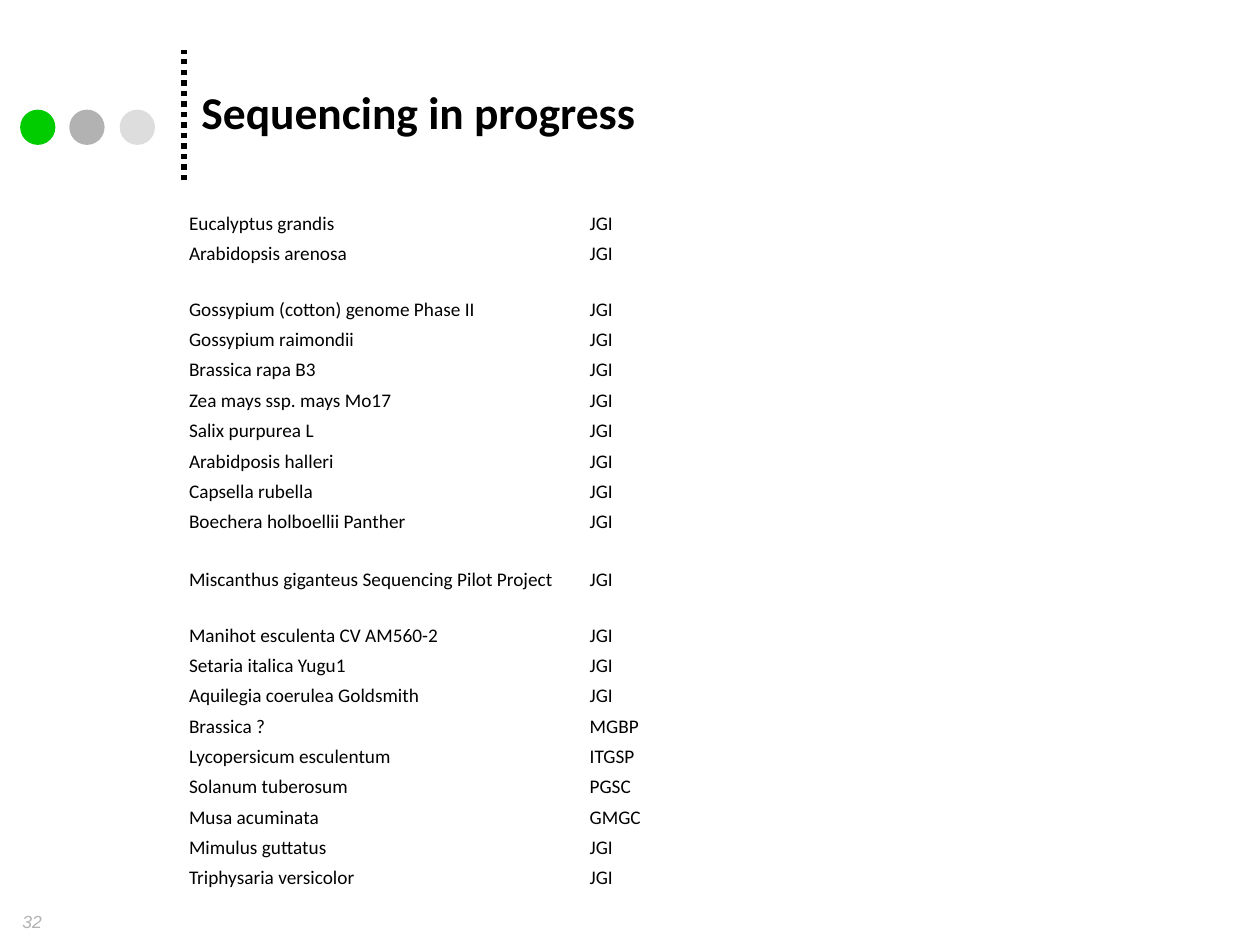
from pptx import Presentation
from pptx import util as u
from pptx.dml.color import RGBColor
from pptx.enum import dml, shapes, text
from pptx.oxml.ns import qn
from lxml import etree

SEQUENCING = [
    ("Eucalyptus grandis", "JGI"),
    ("Arabidopsis arenosa", "JGI"),
    ("Gossypium (cotton) genome Phase II", "JGI"),
    ("Gossypium raimondii", "JGI"),
    ("Brassica rapa B3", "JGI"),
    ("Zea mays ssp. mays Mo17", "JGI"),
    ("Salix purpurea L", "JGI"),
    ("Arabidposis halleri", "JGI"),
    ("Capsella rubella", "JGI"),
    ("Boechera holboellii Panther", "JGI"),
    ("Miscanthus giganteus Sequencing Pilot Project", "JGI"),
    ("Manihot esculenta CV AM560-2", "JGI"),
    ("Setaria italica Yugu1", "JGI"),
    ("Aquilegia coerulea Goldsmith", "JGI"),
    ("Brassica ?", "MGBP"),
    ("Lycopersicum esculentum", "ITGSP"),
    ("Solanum tuberosum", "PGSC"),
    ("Musa acuminata", "GMGC"),
    ("Mimulus guttatus", "JGI"),
    ("Triphysaria versicolor", "JGI"),
]
ROW_HEIGHT = 0.241
TALL_ROWS = {2: 0.44, 10: 0.46, 11: 0.44}
COLUMN_WIDTHS = (3.18, 2.33)


def color(hex_string):
    """Return the colour for a hex string."""
    return RGBColor.from_string(hex_string)


def style(paragraph, size, face, hex_string, bold=False, italic=False):
    """Set the font of a whole paragraph."""
    font = paragraph.font
    font.size, font.name = u.Pt(size), face
    font.bold, font.italic = bold, italic
    font.color.rgb = color(hex_string)


def add_label(slide, box, wording, anchor, **font):
    """Add a wrapped text box holding one paragraph."""
    frame = slide.shapes.add_textbox(*map(u.Inches, box)).text_frame
    frame.word_wrap = True
    frame.vertical_anchor = anchor
    frame.text = wording
    style(frame.paragraphs[0], **font)


def add_dot(slide, left, hex_string):
    """Add one of the round ornaments beside the title."""
    dot = slide.shapes.add_shape(
        shapes.MSO_SHAPE.OVAL, u.Inches(left), u.Inches(0.87), u.Inches(0.28), u.Inches(0.28))
    dot.shadow.inherit = False
    dot.fill.solid()
    dot.fill.fore_color.rgb = color(hex_string)
    dot.line.fill.background()


def add_divider(slide):
    """Add the dotted vertical line left of the title."""
    divider = slide.shapes.add_connector(
        shapes.MSO_CONNECTOR.STRAIGHT,
        u.Inches(1.46), u.Inches(1.43), u.Inches(1.46), u.Inches(0.4))
    divider.line.color.rgb = color("000000")
    divider.line.width = u.Pt(3)
    divider.line.dash_style = dml.MSO_LINE.ROUND_DOT
    etree.SubElement(divider._element.spPr, qn("a:effectLst"))


def fill_cell(cell, wording):
    """Write one unfilled table cell, anchored at its bottom."""
    cell.fill.background()
    cell.vertical_anchor = text.MSO_ANCHOR.BOTTOM
    cell.margin_left = cell.margin_right = cell.margin_top = u.Inches(0.01)
    cell.margin_bottom = 0
    cell.text = wording
    style(cell.text_frame.paragraphs[0], 11, "Calibri", "000000")


def add_species_table(slide):
    """Add the table of species and sequencing centres."""
    heights = [TALL_ROWS.get(i, ROW_HEIGHT) for i in range(len(SEQUENCING))]
    table = slide.shapes.add_table(
        len(SEQUENCING), len(COLUMN_WIDTHS), u.Inches(1.49), u.Inches(1.63),
        u.Inches(sum(COLUMN_WIDTHS)), u.Inches(sum(heights))).table
    table.first_row = table.horz_banding = False
    for column, width in zip(table.columns, COLUMN_WIDTHS):
        column.width = u.Inches(width)
    for row, height, entry in zip(table.rows, heights, SEQUENCING):
        row.height = u.Inches(height)
        for cell, wording in zip(row.cells, entry):
            fill_cell(cell, wording)


def main():
    """Build and save the slide."""
    deck = Presentation()
    deck.slide_width, deck.slide_height = u.Inches(10), u.Inches(7.5)
    slide = deck.slides.add_slide(deck.slide_layouts[6])
    add_divider(slide)
    for left, hex_string in ((0.16, "00CC00"), (0.55, "B2B2B2"), (0.95, "DDDDDD")):
        add_dot(slide, left, hex_string)
    add_label(slide, (1.5, 0.33, 7.82, 1.1), "Sequencing in progress",
              text.MSO_ANCHOR.MIDDLE, size=26, face="Calibri", hex_string="000000", bold=True)
    add_label(slide, (0.08, 7.18, 1.42, 0.28), "32",
              text.MSO_ANCHOR.TOP, size=10, face="Arial", hex_string="B2B2B2", italic=True)
    add_species_table(slide)
    deck.save("out.pptx")


if __name__ == "__main__":
    main()
